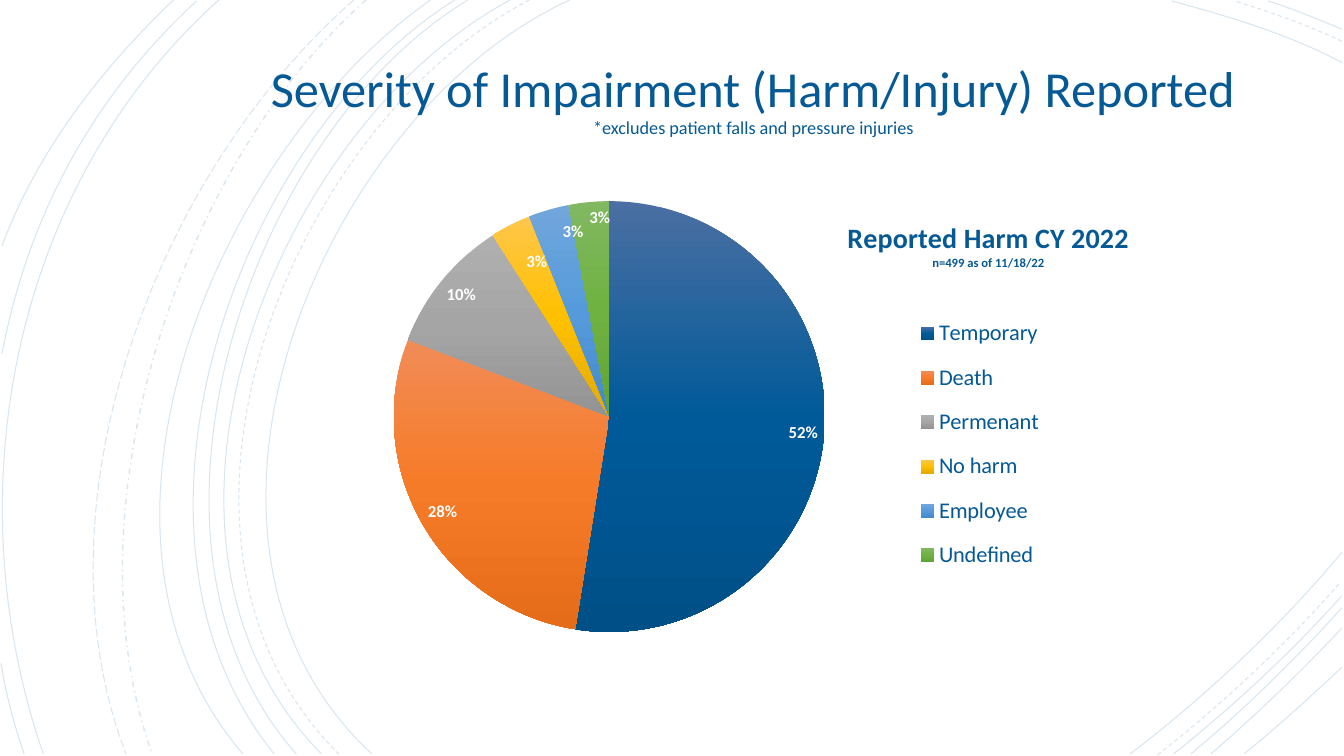
from lxml import etree
from pptx import Presentation
from pptx.chart.data import CategoryChartData
from pptx.dml.color import RGBColor
from pptx.enum import chart as chart_enum, dml, text
from pptx.oxml import parse_xml
from pptx.oxml.ns import nsdecls, qn
from pptx.util import Inches, Pt

FONT = "Calibri"
COLORS = {"blue": "055994", "white": "FFFFFF"}
TITLE = "Severity of Impairment (Harm/Injury) Reported"
SUBTITLE = "*excludes patient falls and pressure injuries"
CHART_TITLE = [("Reported Harm CY 2022", 20), ("n=499 as of 11/18/22", 9)]

# category, share, gradient from top to bottom
HARM = [
    ("Temporary", 0.52, ("4B6FA2", "005A99", "005088")),
    ("Death", 0.28, ("F18C57", "F67B28", "E56C19")),
    ("Permenant", 0.10, ("AFAFAF", "A5A5A5", "939393")),
    ("No harm", 0.03, ("FFC64B", "FFC000", "E3AB00")),
    ("Employee", 0.03, ("71A6DB", "559BDB", "448ACA")),
    ("Undefined", 0.03, ("81B861", "6FB242", "62A336")),
]
LABEL_SHIFTS = {3: (0.016, 0.044), 4: (0.015, 0.013)}

# Each arc: start, two control points, end (inches)
ARCS = {
    "SOLID": [
        ((5.65, 0), (3.15, 1.15), (1.43, 5.4), (3.69, 7.48)),
        ((13.31, 0.62), (12.78, 0.34), (12.18, 0.16), (11.62, 0.01)),
        ((11.21, 7.48), (11.97, 6.9), (12.69, 6.22), (13.31, 5.48)),
        ((5.06, 0), (2.7, 1.27), (1.1, 5.37), (3.19, 7.48)),
        ((13.31, 0.29), (13.07, 0.19), (12.83, 0.09), (12.58, 0.01)),
        ((11.64, 7.48), (12.23, 7.01), (12.8, 6.48), (13.31, 5.91)),
        ((4.64, 0), (2.44, 1.33), (1.1, 5.41), (2.94, 7.48)),
        ((11.81, 7.48), (12.34, 7.04), (12.84, 6.55), (13.31, 6.03)),
        ((4.51, 0), (2.31, 1.38), (0.97, 5.33), (2.72, 7.48)),
        ((12.01, 7.48), (12.46, 7.09), (12.9, 6.67), (13.31, 6.23)),
        ((4.27, 0), (2.17, 1.47), (0.53, 5.29), (2.41, 7.48)),
        ((12.34, 7.48), (12.67, 7.21), (12.99, 6.92), (13.31, 6.62)),
        ((2.17, 0), (0.11, 1.85), (-0.46, 4.9), (0.43, 7.48)),
        ((1.95, 0.01), (0.92, 0.96), (0.28, 2.14), (0.02, 3.51)),
        ((0.01, 6.58), (0.06, 6.89), (0.14, 7.19), (0.24, 7.48)),
        ((1.72, 0), (1, 0.69), (0.37, 1.5), (0.02, 2.44)),
    ],
    "DASH": [
        ((5.25, 0), (2.85, 1.25), (1.23, 5.37), (3.36, 7.48)),
        ((13.31, 0.41), (12.97, 0.25), (12.6, 0.12), (12.25, 0.01)),
        ((11.48, 7.49), (12.13, 6.98), (12.75, 6.4), (13.3, 5.77)),
    ],
    "DASH_DOT": [((3.63, 0), (1.76, 1.66), (0.65, 5.09), (1.51, 7.48))],
    "LONG_DASH": [((3.51, 0), (1.57, 1.69), (0.29, 4.99), (1.25, 7.48))],
}


def set_font(font, size, color="blue", bold=False):
    font.name, font.size, font.bold = FONT, Pt(size), bold
    font.color.rgb = RGBColor.from_string(COLORS[color])


def add_arc(slide, points, dash):
    """Draw a faint cubic curve through a start, two controls and an end."""
    start, *rest = [(Inches(x), Inches(y)) for x, y in points]
    builder = slide.shapes.build_freeform(*start)
    builder.add_line_segments(rest, close=False)
    arc = builder.convert_to_shape()
    arc.shadow.inherit = False
    arc.fill.background()
    arc.line.color.rgb = RGBColor.from_string(COLORS["blue"])
    arc.line.width = Pt(1 if dash == "DASH_DOT" else 0.75)
    arc.line.dash_style = dml.MSO_LINE[dash]
    line_color = arc.element.find(".//" + qn("a:ln")).find(".//" + qn("a:srgbClr"))
    etree.SubElement(line_color, qn("a:alpha"), val="15000")
    outline = arc.element.find(".//" + qn("a:path"))
    curve = etree.SubElement(outline, qn("a:cubicBezTo"))
    for segment in outline.findall(qn("a:lnTo")):
        curve.append(segment[0])
        outline.remove(segment)


def manual_layout(**values):
    """Chart layout from fractions x, y, w, h; w and h make it absolute."""
    modes = ""
    if "w" in values:
        modes = '<c:xMode val="edge"/><c:yMode val="edge"/>'
    sizes = "".join(f'<c:{key} val="{value}"/>' for key, value in values.items())
    return parse_xml(f'<c:layout {nsdecls("c")}><c:manualLayout>{modes}{sizes}'
                     '</c:manualLayout></c:layout>')


def place(element, layout, after):
    """Put a layout into a chart element, right after the named child."""
    for old in element.findall(qn("c:layout")):
        element.remove(old)
    anchor = element.find(qn(after)) if after else None
    if anchor is None:
        element.insert(0, layout)
    else:
        anchor.addnext(layout)


def fill_gradient(point, stops):
    point.format.fill.solid()
    solid = point.format.fill._xPr.find(qn("a:solidFill"))
    marks = "".join(f'<a:gs pos="{i * 50000}"><a:srgbClr val="{color}"/></a:gs>'
                    for i, color in enumerate(stops))
    solid.getparent().replace(solid, parse_xml(
        f'<a:gradFill {nsdecls("a")} rotWithShape="1"><a:gsLst>{marks}</a:gsLst>'
        '<a:lin ang="5400000" scaled="0"/></a:gradFill>'))


def add_title(slide):
    title = slide.shapes.title
    slide.shapes.element.append(title.element)  # in front of the arcs
    title.left, title.top = Inches(2.48), Inches(0.43)
    title.width, title.height = Inches(9.98), Inches(1.15)
    frame = title.text_frame
    frame.word_wrap = True
    frame.auto_size = text.MSO_AUTO_SIZE.NONE
    frame.vertical_anchor = text.MSO_ANCHOR.MIDDLE
    paragraph = frame.paragraphs[0]
    paragraph.alignment = text.PP_ALIGN.CENTER
    paragraph.line_spacing = 0.9
    run = paragraph.add_run()
    run.text = TITLE
    set_font(run.font, 36)
    paragraph.add_line_break()
    run = paragraph.add_run()
    run.text = SUBTITLE
    set_font(run.font, 13)


def add_harm_chart(slide):
    data = CategoryChartData(number_format="0%")
    data.categories = [name for name, _, _ in HARM]
    data.add_series("Series 1", [share for _, share, _ in HARM])
    chart = slide.shapes.add_chart(
        chart_enum.XL_CHART_TYPE.PIE, Inches(3.41), Inches(1.72),
        Inches(8.14), Inches(4.76), data).chart
    set_font(chart.font, 10)

    frame = chart.chart_title.text_frame
    for i, (line, size) in enumerate(CHART_TITLE):
        paragraph = frame.add_paragraph() if i else frame.paragraphs[0]
        paragraph.text = line
        set_font(paragraph.font, size, bold=True)
    title = chart.chart_title._element
    place(title, manual_layout(x=0.61, y=0.09, w=0.35, h=0.12), "c:tx")

    chart.has_legend = True
    chart.legend.position = chart_enum.XL_LEGEND_POSITION.RIGHT
    chart.legend.include_in_layout = False
    set_font(chart.legend.font, 16)
    place(chart.legend._element, manual_layout(x=0.69, y=0.27, w=0.17, h=0.59),
          "c:legendPos")

    plot = chart.plots[0]
    plot.vary_by_categories = True
    plot_layout = manual_layout(x=0.054, y=0.058, w=0.539, h=0.898)
    plot_layout[0].insert(0, parse_xml(
        f'<c:layoutTarget {nsdecls("c")} val="inner"/>'))
    place(plot._element.getparent(), plot_layout, None)

    series = plot.series[0]
    inside = chart_enum.XL_LABEL_POSITION.INSIDE_END
    labels = series.data_labels
    labels.show_value = True
    labels.number_format, labels.number_format_is_linked = "0%", False
    labels.position = inside
    set_font(labels.font, 12, "white", True)
    for i, (_, _, stops) in enumerate(HARM):
        fill_gradient(series.points[i], stops)
    for i, (x, y) in LABEL_SHIFTS.items():
        label = series.points[i].data_label
        set_font(label.font, 12, "white", True)
        label.position = inside
        element = label._dLbl
        place(element, manual_layout(x=x, y=y), "c:idx")
        element.find(qn("c:layout")).addnext(parse_xml(
            f'<c:numFmt {nsdecls("c")} formatCode="0%" sourceLinked="0"/>'))


def main():
    presentation = Presentation()
    presentation.slide_width, presentation.slide_height = Inches(13.33), Inches(7.5)
    slide = presentation.slides.add_slide(presentation.slide_layouts[5])
    for dash, arcs in ARCS.items():
        for points in arcs:
            add_arc(slide, points, dash)
    add_title(slide)
    add_harm_chart(slide)
    presentation.save("out.pptx")


if __name__ == "__main__":
    main()
